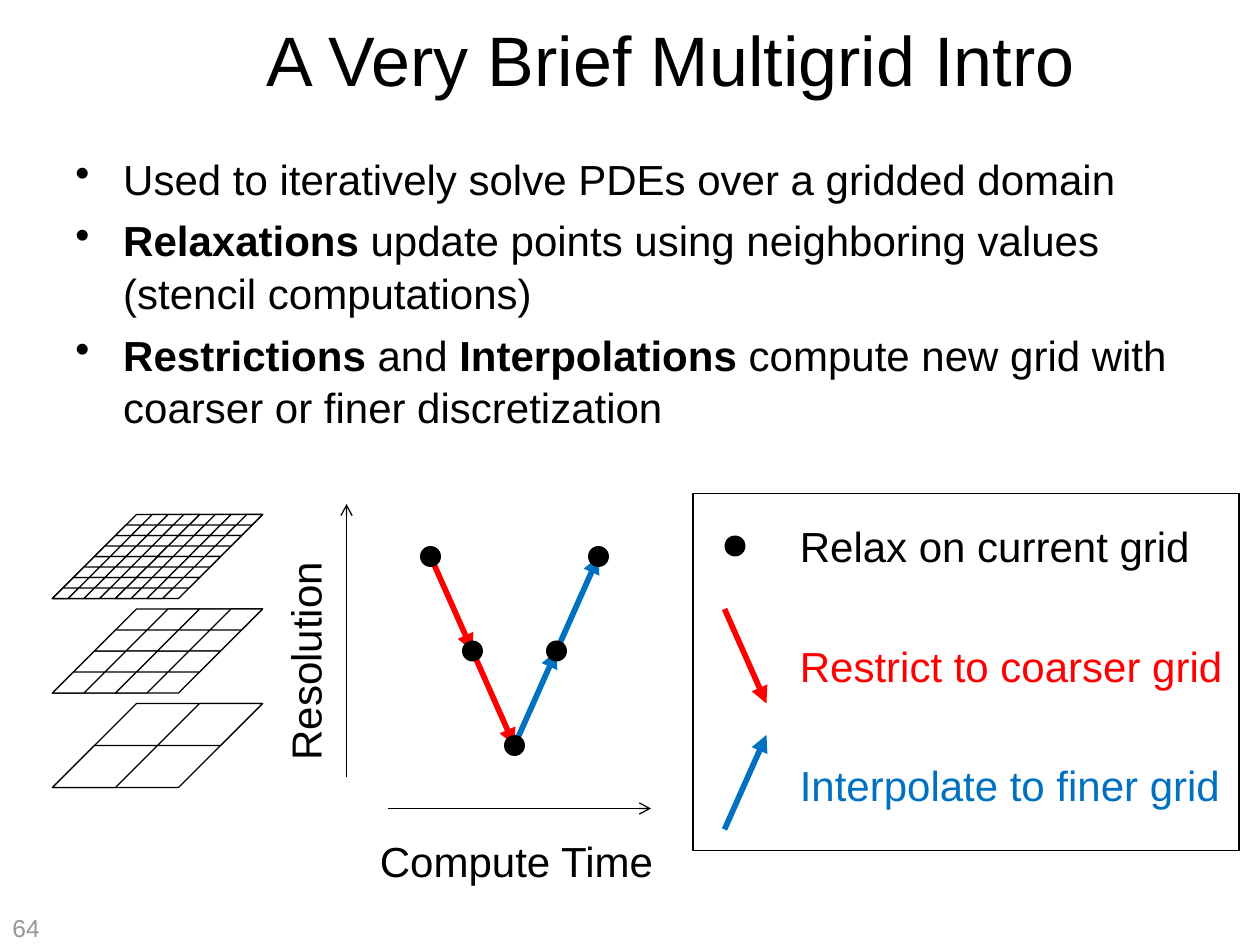
from itertools import pairwise
from typing import NamedTuple

from pptx import Presentation
from pptx.dml.color import RGBColor
from pptx.enum.shapes import MSO_CONNECTOR, MSO_SHAPE
from pptx.enum.text import MSO_ANCHOR, PP_ALIGN
from pptx.oxml.ns import qn
from pptx.util import Emu, Inches, Pt
from lxml.etree import SubElement

BLACK = RGBColor(0, 0, 0)
WHITE = RGBColor(255, 255, 255)
RED = RGBColor(255, 0, 0)
BLUE = RGBColor(0, 112, 192)
GRAY = RGBColor(150, 150, 150)
FONT = "Arial"

# The slide is a grid of 120 columns by 90 rows of square units
COLUMNS, ROWS = 120, 90
UNIT = Inches(10) // COLUMNS


class Point(NamedTuple):
    col: float
    row: float


class Box(NamedTuple):
    col: float
    row: float
    cols: float
    rows: float


class Label(NamedTuple):
    text: str
    box: Box
    size: int = 24
    color: RGBColor = BLACK
    rotation: int = 0


class Arrow(NamedTuple):
    start: Point
    end: Point
    color: RGBColor = BLACK
    weight: float = 0.75
    head: str = "arrow"


class GridLevel(NamedTuple):
    top: int
    divisions: int


def units(*lengths: float) -> list[Emu]:
    return [Emu(round(length * UNIT)) for length in lengths]


def set_font(paragraph, size: int, color: RGBColor) -> None:
    paragraph.font.name = FONT
    paragraph.font.size = Pt(size)
    paragraph.font.color.rgb = color


def add_frame(slide, box: Box, wrap: bool = True, rotation: int = 0):
    area = slide.shapes.add_textbox(*units(*box))
    area.rotation = rotation
    area.text_frame.word_wrap = wrap
    return area.text_frame


def add_label(slide, label: Label) -> None:
    frame = add_frame(slide, label.box, False, label.rotation)
    frame.text = label.text
    set_font(frame.paragraphs[0], label.size, label.color)


def add_outline(slide, kind: MSO_SHAPE, box: Box):
    outline = slide.shapes.add_shape(kind, *units(*box))
    outline.shadow.inherit = False
    outline.line.color.rgb = BLACK
    outline.line.width = Pt(0.75)
    return outline


def add_dot(slide, center: Point) -> None:
    dot = slide.shapes.add_shape(
        MSO_SHAPE.OVAL, *units(center.col - 1, center.row - 1, 2, 2))
    dot.shadow.inherit = False
    dot.fill.solid()
    dot.fill.fore_color.rgb = BLACK
    dot.line.fill.background()


def add_arrow(slide, arrow: Arrow) -> None:
    line = slide.shapes.add_connector(
        MSO_CONNECTOR.STRAIGHT, *units(*arrow.start, *arrow.end))
    line.line.color.rgb = arrow.color
    line.line.width = Pt(arrow.weight)
    SubElement(line.line._get_or_add_ln(), qn("a:tailEnd"), type=arrow.head)
    SubElement(line._element.spPr, qn("a:effectLst"))


def add_grid(slide, level: GridLevel) -> None:
    """Draw a slanted plane, then alternate cells of each finer division."""
    left, base, height = 5, 12, 8
    n = 1
    while n <= level.divisions:
        step = height / n
        for row in range(n):
            for col in range(n):
                if n > 1 and (row + col) % 2 == 0:
                    continue
                cell = add_outline(slide, MSO_SHAPE.PARALLELOGRAM, Box(
                    left + (n - 1 - row) * step + col * base / n,
                    level.top + row * step, (base + height) / n, step))
                cell.adjustments[0] = 1
                cell.fill.solid()
                cell.fill.fore_color.rgb = WHITE
        n *= 2


# Each bullet is a list of (text, bold) runs
BULLETS = [
    [("Used to iteratively solve PDEs over a gridded domain", False)],
    [("Relaxations", True),
     (" update points using neighboring values (stencil computations)", False)],
    [("Restrictions", True), (" and ", False), ("Interpolations", True),
     (" compute new grid with coarser or finer discretization", False)],
]
GRID_LEVELS = [GridLevel(49, 8), GridLevel(58, 4), GridLevel(67, 2)]
V_CYCLE = [Point(41, 53), Point(45, 62), Point(49, 71), Point(53, 62), Point(57, 53)]
AXES = [Arrow(Point(33, 74), Point(33, 48)), Arrow(Point(37, 77), Point(62, 77))]
LABELS = [
    Label("Resolution", Box(18.25, 59.8, 21.6, 6), rotation=270),
    Label("Compute Time", Box(35, 79, 28.7, 6)),
    Label("64", Box(0, 86.4, 5.6, 3.6), 14, GRAY),
]
LEGEND = [
    ("Relax on current grid", BLACK),
    ("Restrict to coarser grid", RED),
    ("Interpolate to finer grid", BLUE),
]


def add_title(slide) -> None:
    title = slide.shapes.title
    title.left, title.top, title.width, title.height = units(15.6, 0, 96.5, 11.2)
    title.text_frame.text = "A Very Brief Multigrid Intro"
    title.text_frame.vertical_anchor = MSO_ANCHOR.MIDDLE
    heading = title.text_frame.paragraphs[0]
    heading.alignment = PP_ALIGN.CENTER
    set_font(heading, 40, BLACK)


def add_bullets(slide) -> None:
    frame = add_frame(slide, Box(6, 13.8, 108, 32.3))
    for index, runs in enumerate(BULLETS):
        bullet = frame.add_paragraph() if index else frame.paragraphs[0]
        props = bullet._p.get_or_add_pPr()
        props.set("marL", str(Inches(0.38)))
        props.set("indent", str(-Inches(0.38)))
        SubElement(props, qn("a:buChar"), char="•")
        bullet.line_spacing = 1.05
        if index:
            bullet.space_before = Pt(4.8)
        set_font(bullet, 24, BLACK)
        for text, bold in runs:
            run = bullet.add_run()
            run.text = text
            run.font.bold = bold


def add_legend(slide) -> None:
    frame = add_frame(slide, Box(75, 49, 43, 31))
    for index, (text, color) in enumerate(LEGEND):
        entry = frame.add_paragraph() if index else frame.paragraphs[0]
        entry.text = text
        if index:
            entry.space_before = Pt(39.5)
        set_font(entry, 24, color)
    add_dot(slide, Point(70, 52))
    add_arrow(slide, Arrow(Point(69, 58), Point(73, 67), RED, 3.25, "triangle"))
    add_arrow(slide, Arrow(Point(69, 79), Point(73, 70), BLUE, 3.25, "triangle"))


def main() -> None:
    deck = Presentation()
    deck.slide_width, deck.slide_height = units(COLUMNS, ROWS)
    slide = deck.slides.add_slide(deck.slide_layouts[5])

    add_title(slide)
    add_bullets(slide)

    # Grids from fine to coarse
    for level in GRID_LEVELS:
        add_grid(slide, level)

    # V-cycle: down by restriction, up by interpolation
    for start, end in pairwise(V_CYCLE):
        color = RED if end.row > start.row else BLUE
        add_arrow(slide, Arrow(start, end, color, 3.25, "triangle"))
    for center in V_CYCLE:
        add_dot(slide, center)
    for axis in AXES:
        add_arrow(slide, axis)
    for label in LABELS:
        add_label(slide, label)

    # Legend
    add_outline(slide, MSO_SHAPE.RECTANGLE, Box(66, 47, 52, 34)).fill.background()
    add_legend(slide)

    deck.save("out.pptx")


if __name__ == "__main__":
    main()
